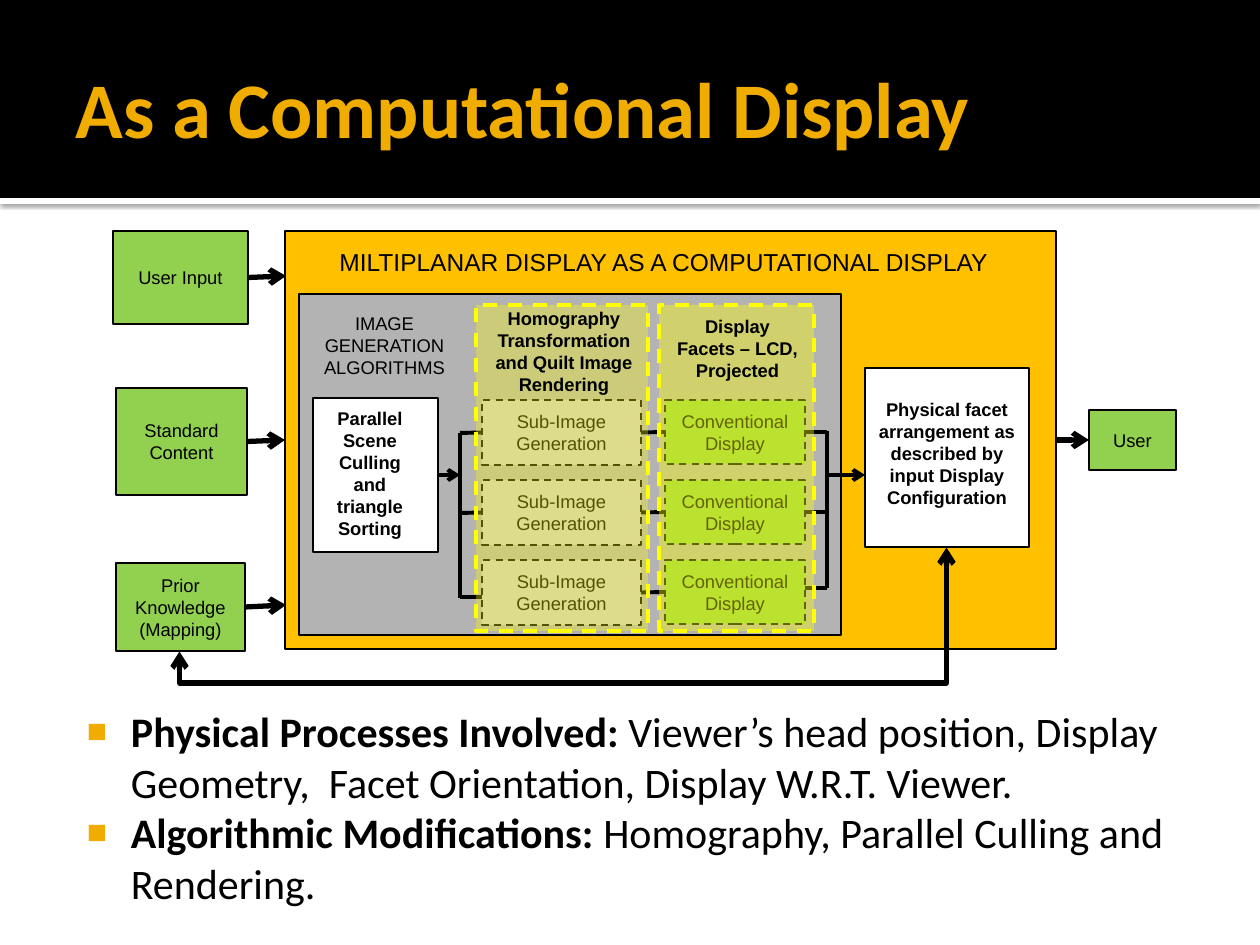
from lxml.etree import SubElement
from pptx import Presentation
from pptx.dml.color import RGBColor
from pptx.enum.dml import MSO_LINE
from pptx.enum.shapes import MSO_CONNECTOR, MSO_SHAPE
from pptx.enum.text import MSO_ANCHOR, PP_ALIGN
from pptx.oxml import parse_xml
from pptx.oxml.ns import nsdecls, qn
from pptx.util import Pt

BLACK = RGBColor(0x00, 0x00, 0x00)
WHITE = RGBColor(0xFF, 0xFF, 0xFF)
GOLD = RGBColor(0xF0, 0xAD, 0x00)
ORANGE = RGBColor(0xFF, 0xC0, 0x00)
GRAY = RGBColor(0xB3, 0xB3, 0xB3)
SILVER = RGBColor(0xCC, 0xCC, 0xCC)
GREEN = RGBColor(0x92, 0xD0, 0x50)
YELLOW = RGBColor(0xFF, 0xFF, 0x00)
TOP, LEFT, BOTTOM, RIGHT = range(4)


def px(num):
    return round(num * 914400 / 126)


def write(shape, paras, size=10.5, bold=False, font="Arial", color=BLACK,
          align=PP_ALIGN.CENTER, anchor=MSO_ANCHOR.MIDDLE):
    """Each paragraph is a string, or a list of (text, bold) runs."""
    frame = shape.text_frame
    frame.word_wrap = True
    frame.vertical_anchor = anchor
    for i, para in enumerate(paras):
        line = frame.paragraphs[0] if i == 0 else frame.add_paragraph()
        line.alignment = align
        for text, heavy in [(para, bold)] if isinstance(para, str) else para:
            run = line.add_run()
            run.text = text
            run.font.size = Pt(size)
            run.font.name = font
            run.font.bold = heavy
            run.font.color.rgb = color
    return frame


def box(slide, area, fill, paras=(), line=BLACK, width=1, dash=False, alpha=None):
    shape = slide.shapes.add_shape(MSO_SHAPE.RECTANGLE, *map(px, area))
    shape.shadow.inherit = False
    shape.fill.solid()
    shape.fill.fore_color.rgb = fill
    if alpha:
        color = shape.fill._xPr.find(qn("a:solidFill"))[0]
        SubElement(color, qn("a:alpha"), val=str(alpha * 1000))
    if line is None:
        shape.line.fill.background()
    else:
        shape.line.color.rgb = line
        shape.line.width = Pt(width)
        if dash:
            shape.line.dash_style = MSO_LINE.DASH
    if paras:
        write(shape, paras)
    return shape


def label(slide, area, paras, anchor=MSO_ANCHOR.TOP, **style):
    shape = slide.shapes.add_textbox(*map(px, area))
    return write(shape, paras, anchor=anchor, **style)


def link(slide, start, end, width=2.25, heads=(), kind=MSO_CONNECTOR.STRAIGHT):
    """Each end is an (x, y) point or a (shape, site) pair."""
    points = [(0, 0) if hasattr(spot[0], "shape_id") else spot for spot in (start, end)]
    line = slide.shapes.add_connector(kind, *[px(n) for point in points for n in point])
    for spot, join in ((start, line.begin_connect), (end, line.end_connect)):
        if hasattr(spot[0], "shape_id"):
            join(*spot)
    line.line.color.rgb = BLACK
    line.line.width = Pt(width)
    stroke = line.line._get_or_add_ln()
    for head in heads:
        SubElement(stroke, qn("a:" + head), type="arrow")
    SubElement(line._element.spPr, qn("a:effectLst"))
    return line


def header(slide):
    stripe = box(slide, (0, 198, 1260, 6), WHITE, line=None)
    props = stripe._element.spPr
    props.remove(props.find(qn("a:effectLst")))
    props.append(parse_xml(
        f'<a:effectLst {nsdecls("a")}><a:outerShdw blurRad="31750" dist="10160" '
        'dir="5400000" algn="tl" rotWithShape="0"><a:srgbClr val="000000">'
        '<a:alpha val="60000"/></a:srgbClr></a:outerShdw></a:effectLst>'))
    box(slide, (0, 0, 1260, 198), BLACK, line=None)
    frame = label(slide, (63, 21, 1134, 173), ["As a Computational Display"],
                  MSO_ANCHOR.MIDDLE, size=45, bold=True, font="Calibri",
                  color=GOLD, align=PP_ALIGN.LEFT)
    frame.margin_right = px(6)


def diagram(slide):
    # Nested panels and outer boxes
    panel = box(slide, (285, 231, 771, 418), ORANGE)
    box(slide, (299, 294, 542, 341), GRAY)
    label(slide, (291, 241, 746, 43),
          ["MILTIPLANAR DISPLAY AS A COMPUTATIONAL DISPLAY"], size=14)
    label(slide, (304, 306, 161, 79), ["IMAGE GENERATION ALGORITHMS"])
    sorter = box(slide, (313, 398, 125, 154), WHITE)
    facet = box(slide, (865, 368, 164, 179), WHITE)
    user = box(slide, (1089, 410, 87, 60), GREEN, ["User"])
    entry = box(slide, (113, 231, 135, 93), GREEN, ["User Input"])
    content = box(slide, (116, 388, 131, 107), GREEN, ["Standard Content"])
    prior = box(slide, (116, 563, 129, 88), GREEN, ["Prior Knowledge", "(Mapping)"])

    # Inputs and output
    arrow = ("tailEnd",)
    link(slide, (entry, RIGHT), (286, 276), 3, arrow)
    link(slide, (content, RIGHT), (panel, LEFT), 3, arrow)
    link(slide, (prior, RIGHT), (286, 605), 3, arrow)
    link(slide, (panel, RIGHT), (user, LEFT), 3, arrow)

    # Three parallel rows between two buses
    split, merge = 460, 827
    link(slide, (split, 433), (split, 598))
    link(slide, (merge, 431), (merge, 588))
    for row in range(3):
        top = 400 + 80 * row
        sub = box(slide, (482, top, 159, 65), SILVER, ["Sub-Image Generation"], dash=True)
        show = box(slide, (665, top, 140, 64), GREEN, ["Conventional Display"], dash=True)
        last = row == 2
        link(slide, (split, 597 if last else top + 33), (482, 597) if last else (sub, LEFT))
        link(slide, (sub, RIGHT), (show, LEFT))
        link(slide, (805, 588) if last else (show, RIGHT), (merge, 588 if last else top + 32))
    link(slide, (sorter, RIGHT), (split, 475), heads=arrow)
    link(slide, (merge, 475), (865, 475), heads=arrow)

    # Feedback between the facets and prior knowledge
    loop = link(slide, (facet, BOTTOM), (prior, BOTTOM), 3,
                ("headEnd", "tailEnd"), MSO_CONNECTOR.ELBOW)
    loop.left, loop.top, loop.width, loop.height = map(px, (511, 216, 104, 767))
    frame = loop._element.spPr.find(qn("a:xfrm"))
    frame.attrib.pop("flipH", None)
    frame.set("rot", "5400000")
    guides = loop._element.spPr.find(qn("a:prstGeom")).get_or_add_avLst()
    SubElement(guides, qn("a:gd"), name="adj1", fmla="val 130300")

    # Yellow veils and bold captions
    for left, wide, alpha in ((659, 155, 39), (476, 172, 32)):
        box(slide, (left, 305, wide, 326), YELLOW, line=YELLOW, width=2,
            dash=True, alpha=alpha)
    captions = [
        ((480, 301, 168, 102), ["Homography Transformation and Quilt Image Rendering"]),
        ((659, 309, 157, 79), ["Display", "Facets – LCD, Projected"]),
        ((863, 392, 168, 123), ["Physical facet arrangement as",
                                "described by input Display Configuration"]),
        ((312, 401, 116, 146), ["Parallel", "Scene", "Culling and triangle Sorting"]),
    ]
    for area, paras in captions:
        label(slide, area, paras, bold=True)


def points(slide):
    paras = [
        [("Physical Processes Involved:", True),
         (" Viewer’s head position, Display Geometry,  Facet Orientation, "
          "Display W.R.T. Viewer.", False)],
        [("Algorithmic Modifications: ", True),
         ("Homography, Parallel Culling and Rendering.", False)],
    ]
    frame = label(slide, (63, 693, 1134, 252), paras, size=24, font="Calibri",
                  align=PP_ALIGN.LEFT)
    frame.margin_left, frame.margin_top = px(8), px(13)
    for line in frame.paragraphs:
        props = line._p.get_or_add_pPr()
        props.set("marL", str(px(60)))
        props.set("indent", str(px(-44)))
        color = SubElement(props, qn("a:buClr"))
        SubElement(color, qn("a:srgbClr"), val=str(GOLD))
        SubElement(props, qn("a:buSzPct"), val="80000")
        SubElement(props, qn("a:buFont"), typeface="Arial")
        SubElement(props, qn("a:buChar"), char="■")


def main():
    deck = Presentation()
    deck.slide_width, deck.slide_height = px(1260), px(945)
    slide = deck.slides.add_slide(deck.slide_layouts[6])
    header(slide)
    diagram(slide)
    points(slide)
    deck.save("out.pptx")


if __name__ == "__main__":
    main()
